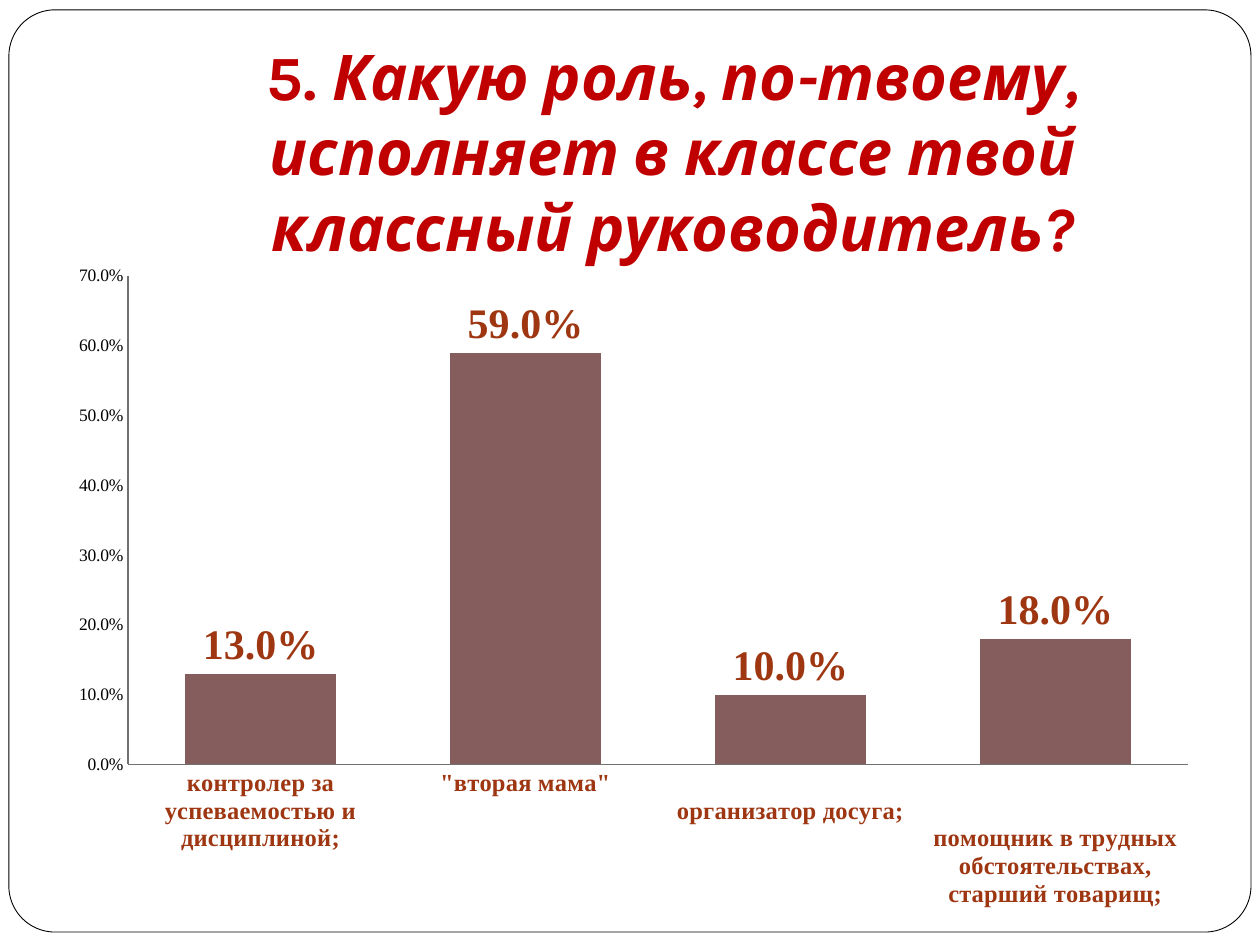
from dataclasses import dataclass

import pptx
import pptx.chart.data
import pptx.dml.color
import pptx.enum.chart
import pptx.enum.shapes
import pptx.enum.text
import pptx.oxml
import pptx.util
from pptx.oxml.ns import nsdecls
from pptx.util import Cm, Pt

RGBColor = pptx.dml.color.RGBColor
WHITE = RGBColor(0xFF, 0xFF, 0xFF)
BLACK = RGBColor(0x00, 0x00, 0x00)
RED = RGBColor(0xC0, 0x00, 0x00)
RUST = RGBColor(0x9E, 0x36, 0x11)
MAUVE = RGBColor(0x85, 0x5D, 0x5D)
GRAY = RGBColor(0x70, 0x70, 0x70)

TITLE_FONT = "Karla"
CHART_FONT = "Times New Roman"
PERCENT = "0.0%"


@dataclass(frozen=True)
class Answer:
    role: str
    share: float


@dataclass(frozen=True)
class TitlePart:
    text: str
    italic: bool


# Line breaks in the roles stagger the axis labels
ANSWERS = [
    Answer("контролер за успеваемостью и дисциплиной;", 0.13),
    Answer('"вторая мама"\n', 0.59),
    Answer("\nорганизатор досуга;\n", 0.10),
    Answer("\n\nпомощник в трудных обстоятельствах, старший товарищ;", 0.18),
]
TITLE = [
    TitlePart("5.\u00a0", False),
    TitlePart("Какую роль, по-твоему, исполняет в классе твой "
              "классный руководитель?", True),
]


def style_font(font, size: float, color: RGBColor, bold: bool = False,
               name: str = CHART_FONT) -> None:
    font.name = name
    font.size = Pt(size)
    font.bold = bold
    font.color.rgb = color


def style_axis(axis) -> None:
    axis.has_major_gridlines = False
    axis.major_tick_mark = pptx.enum.chart.XL_TICK_MARK.NONE
    axis.minor_tick_mark = pptx.enum.chart.XL_TICK_MARK.NONE
    axis.format.line.color.rgb = GRAY
    axis.format.line.width = Pt(0.75)


def add_frame(slide) -> None:
    frame = slide.shapes.add_shape(
        pptx.enum.shapes.MSO_SHAPE.ROUNDED_RECTANGLE,
        Cm(0.18), Cm(0.2), Cm(25.04), Cm(18.59))
    frame.adjustments[0] = 0.05
    frame.shadow.inherit = False
    frame.fill.solid()
    frame.fill.fore_color.rgb = WHITE
    frame.line.color.rgb = BLACK
    frame.line.width = Pt(0.5)


def add_title(slide, parts: list[TitlePart]) -> None:
    title = slide.shapes.add_textbox(Cm(2.77), Cm(2.39), Cm(21.59), Cm(3.18))
    frame = title.text_frame
    frame.word_wrap = True
    frame.vertical_anchor = pptx.enum.text.MSO_ANCHOR.BOTTOM
    frame.margin_bottom = Cm(0.25)
    paragraph = frame.paragraphs[0]
    paragraph.alignment = pptx.enum.text.PP_ALIGN.CENTER
    for part in parts:
        run = paragraph.add_run()
        run.text = part.text
        style_font(run.font, 36, RED, bold=True, name=TITLE_FONT)
        run.font.italic = part.italic


def set_plot_area(chart, x: float, y: float, w: float, h: float) -> None:
    """Fix the inner plot area, as fractions of the chart."""
    plot_area = chart.plots[0]._element.getparent()
    for old in plot_area.findall(pptx.oxml.ns.qn("c:layout")):
        plot_area.remove(old)
    sizes = "".join(f'<c:{tag} val="{value}"/>' for tag, value in
                    zip("xywh", (x, y, w, h)))
    plot_area.insert(0, pptx.oxml.parse_xml(
        f'<c:layout {nsdecls("c")}><c:manualLayout>'
        '<c:layoutTarget val="inner"/>'
        '<c:xMode val="edge"/><c:yMode val="edge"/>'
        f'{sizes}</c:manualLayout></c:layout>'))


def add_answer_chart(slide, answers: list[Answer]) -> None:
    answer_data = pptx.chart.data.CategoryChartData(number_format=PERCENT)
    answer_data.categories = [answer.role for answer in answers]
    answer_data.add_series("Series 1", [answer.share for answer in answers])
    chart = slide.shapes.add_chart(
        pptx.enum.chart.XL_CHART_TYPE.COLUMN_CLUSTERED,
        Cm(1.19), Cm(5.16), Cm(23.22), Cm(13.49), answer_data).chart
    chart.has_legend = False
    chart.has_title = False
    style_font(chart.font, 10, BLACK)
    set_plot_area(chart, 0.06, 0.03, 0.92, 0.73)

    # Axes
    roles, shares = chart.category_axis, chart.value_axis
    style_axis(roles)
    style_axis(shares)
    style_font(roles.tick_labels.font, 14, RUST, bold=True)
    style_font(shares.tick_labels.font, 10, BLACK)
    shares.tick_labels.number_format = PERCENT
    shares.tick_labels.number_format_is_linked = False
    shares.minimum_scale, shares.maximum_scale = 0, 0.7
    shares.major_unit = 0.1

    # Columns and their labels
    columns = chart.plots[0]
    columns.gap_width = 75
    columns.vary_by_categories = False
    columns.series[0].format.fill.solid()
    columns.series[0].format.fill.fore_color.rgb = MAUVE
    columns.has_data_labels = True
    labels = columns.data_labels
    labels.show_value = True
    labels.number_format = PERCENT
    labels.number_format_is_linked = False
    labels.position = pptx.enum.chart.XL_LABEL_POSITION.OUTSIDE_END
    style_font(labels.font, 24, RUST, bold=True)


def main() -> None:
    deck = pptx.Presentation()
    deck.slide_width, deck.slide_height = Cm(25.4), Cm(19.05)
    slide = deck.slides.add_slide(deck.slide_layouts[6])
    add_frame(slide)
    add_title(slide, TITLE)
    add_answer_chart(slide, ANSWERS)
    deck.save("out.pptx")


if __name__ == "__main__":
    main()
